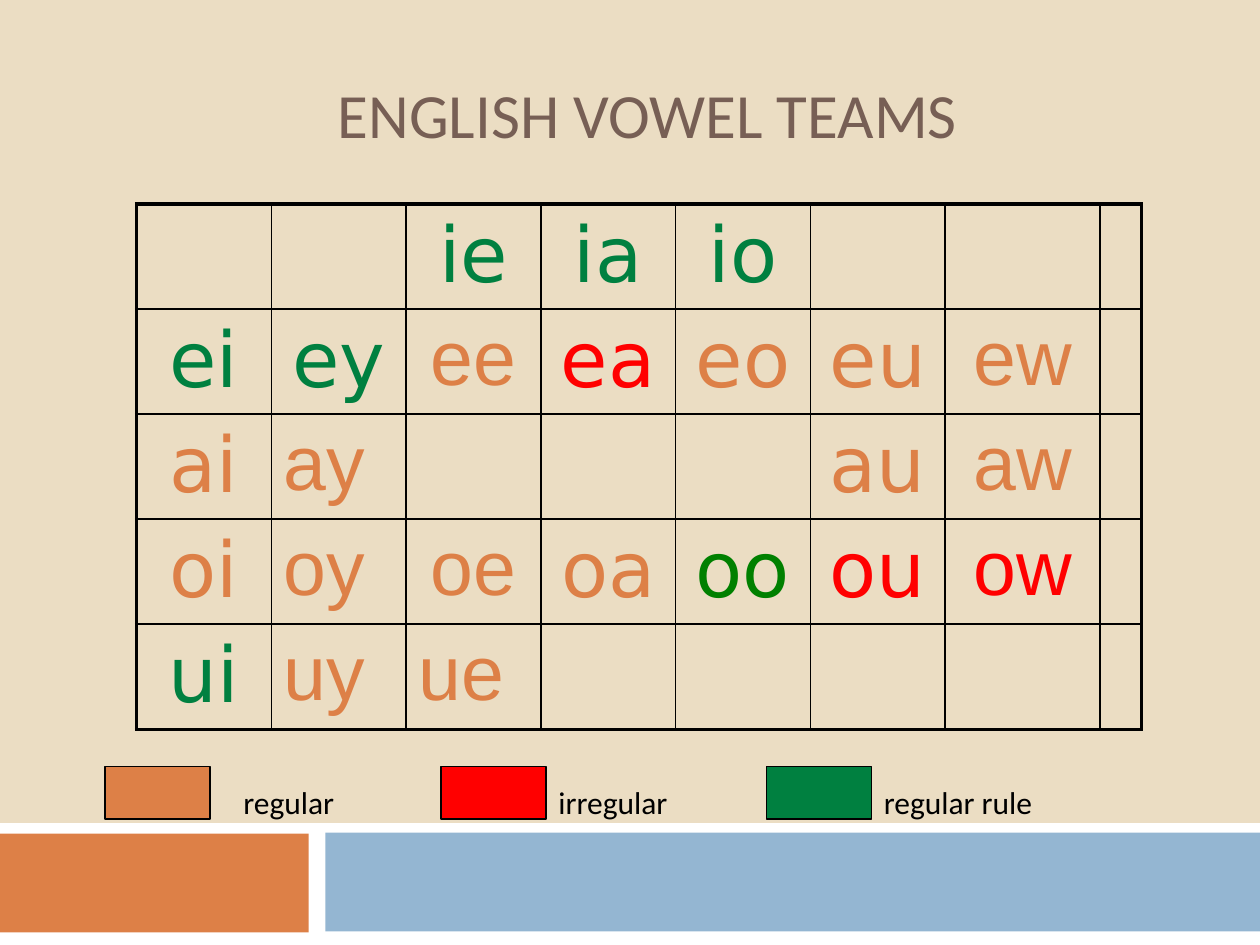
import dataclasses
import typing

import lxml.etree
import pptx
import pptx.dml.color
import pptx.enum.shapes
import pptx.enum.text
import pptx.oxml.ns
import pptx.util

CELL = pptx.util.Inches(1) / 12  # the slide is a grid of 120 columns by 90 rows


@dataclasses.dataclass(frozen=True)
class Theme:
    sand: str = "EBDDC3"
    brown: str = "775F55"
    white: str = "FFFFFF"
    black: str = "000000"
    orange: str = "DD8047"
    blue: str = "94B6D2"
    red: str = "FF0000"
    green: str = "008040"
    pure_green: str = "008000"
    body: str = "Calibri"
    round: str = "DejaVu Sans"
    plain: str = "Arial"
    title_size: int = 36
    team_size: int = 44
    legend_size: int = 18
    thin: float = 1
    thick: float = 2.25
    outline: float = 0.75


THEME = Theme()


class Area(typing.NamedTuple):
    """A place on the grid: first column and row, then columns and rows spanned."""
    column: float
    row: float
    columns: float
    rows: float


class Team(typing.NamedTuple):
    text: str
    color: str = THEME.orange
    font: str = THEME.round
    centered: bool = True


class Key(typing.NamedTuple):
    label: str
    color: str
    swatch_column: float
    label_column: float
    label_columns: float


def plain(text: str, color: str = THEME.orange, centered: bool = True) -> Team:
    return Team(text, color, THEME.plain, centered)


BARS = [
    (Area(0, 78.4, 120, 11.6), THEME.white),
    (Area(-0.1, 79.4, 29.5, 9.4), THEME.orange),
    (Area(31, 79.3, 89, 9.4), THEME.blue),
]
TABLE = Area(13, 19.44, 96, 48.6)
COLUMN_WIDTHS = [1.07] * 6 + [1.23, 0.33]
TEAMS = [
    [None, None, Team("ie", THEME.green), Team("ia", THEME.green),
     Team("io", THEME.green), None, None, None],
    [Team("ei", THEME.green), Team("ey", THEME.green), plain("ee"),
     Team("ea", THEME.red), Team("eo"), Team("eu"), plain("ew"), None],
    [Team("ai"), plain("ay", centered=False), None, None, None,
     Team("au"), plain("aw"), None],
    [Team("oi"), plain("oy", centered=False), plain("oe"), Team("oa"),
     Team("oo", THEME.pure_green), Team("ou", THEME.red),
     plain("ow", THEME.red), None],
    [Team("ui", THEME.green), plain("uy", centered=False),
     plain("ue", centered=False), None, None, None, None, None],
]
LEGEND = [
    Key("regular", THEME.orange, 10, 22, 15),
    Key("irregular", THEME.red, 42, 52, 20),
    Key("regular rule", THEME.green, 73, 83, 23),
]


def place(area: Area) -> list[int]:
    return [round(value * CELL) for value in area]


def rgb(color: str) -> pptx.dml.color.RGBColor:
    return pptx.dml.color.RGBColor.from_string(color)


def write(frame, text: str, size: float, font: str, color: str, centered: bool = False) -> None:
    para = frame.paragraphs[0]
    align = pptx.enum.text.PP_ALIGN
    para.alignment = align.CENTER if centered else align.LEFT
    span = para.add_run()
    span.text = text
    formats = {"size": pptx.util.Pt(size), "name": font, "bold": False}
    for name, value in formats.items():
        setattr(span.font, name, value)
    span.font.color.rgb = rgb(color)


def add_text(page, area: Area, text: str, size: float, color: str, anchor) -> None:
    frame = page.shapes.add_textbox(*place(area)).text_frame
    for name, value in {"word_wrap": True, "vertical_anchor": anchor}.items():
        setattr(frame, name, value)
    write(frame, text, size, THEME.body, color)


def add_block(page, area: Area, color: str, outlined: bool = False) -> None:
    block = page.shapes.add_shape(pptx.enum.shapes.MSO_SHAPE.RECTANGLE, *place(area))
    block.shadow.inherit = False
    block.fill.solid()
    block.fill.fore_color.rgb = rgb(color)
    if outlined:
        block.line.color.rgb = rgb(THEME.black)
        block.line.width = pptx.util.Pt(THEME.outline)
    else:
        block.line.fill.background()


def set_borders(cell, outer: dict[str, bool]) -> None:
    """Draw the four sides, thick where the side lies on the table's edge."""
    qn = pptx.oxml.ns.qn
    properties = cell._tc.get_or_add_tcPr()
    for index, (side, is_outer) in enumerate(outer.items()):
        width = pptx.util.Pt(THEME.thick if is_outer else THEME.thin)
        line = lxml.etree.Element(qn(f"a:ln{side}"), w=str(width))
        fill = lxml.etree.SubElement(line, qn("a:solidFill"))
        lxml.etree.SubElement(fill, qn("a:srgbClr"), val=THEME.black)
        properties.insert(index, line)


def add_teams(page) -> None:
    rows, columns = len(TEAMS), len(COLUMN_WIDTHS)
    table = page.shapes.add_table(rows, columns, *place(TABLE)).table
    for name in ("first_row", "horz_banding"):
        setattr(table, name, False)
    for column, width in zip(table.columns, COLUMN_WIDTHS):
        column.width = pptx.util.Inches(width)
    for r, teams in enumerate(TEAMS):
        table.rows[r].height = round(TABLE.rows * CELL / rows)
        for c, team in enumerate(teams):
            cell = table.cell(r, c)
            cell.fill.background()
            set_borders(cell, {"L": c == 0, "R": c == columns - 1,
                               "T": r == 0, "B": r == rows - 1})
            if team:
                write(cell.text_frame, team.text, THEME.team_size,
                      team.font, team.color, team.centered)


def add_key(page, key: Key) -> None:
    add_block(page, Area(key.swatch_column, 73, 10, 5), key.color, outlined=True)
    add_text(page, Area(key.label_column, 74, key.label_columns, 6), key.label,
             THEME.legend_size, THEME.black, pptx.enum.text.MSO_ANCHOR.TOP)


def main() -> None:
    deck = pptx.Presentation()
    deck.slide_width, deck.slide_height = round(120 * CELL), round(90 * CELL)
    page = deck.slides.add_slide(deck.slide_layouts[6])
    page.background.fill.solid()
    page.background.fill.fore_color.rgb = rgb(THEME.sand)

    # Bars along the foot
    for area, color in BARS:
        add_block(page, area, color)

    # Title
    add_text(page, Area(31, 0, 85, 15), "ENGLISH VOWEL TEAMS", THEME.title_size,
             THEME.brown, pptx.enum.text.MSO_ANCHOR.BOTTOM)

    # Vowel teams and the key to their colours
    add_teams(page)
    for key in LEGEND:
        add_key(page, key)

    deck.save("out.pptx")


if __name__ == "__main__":
    main()
